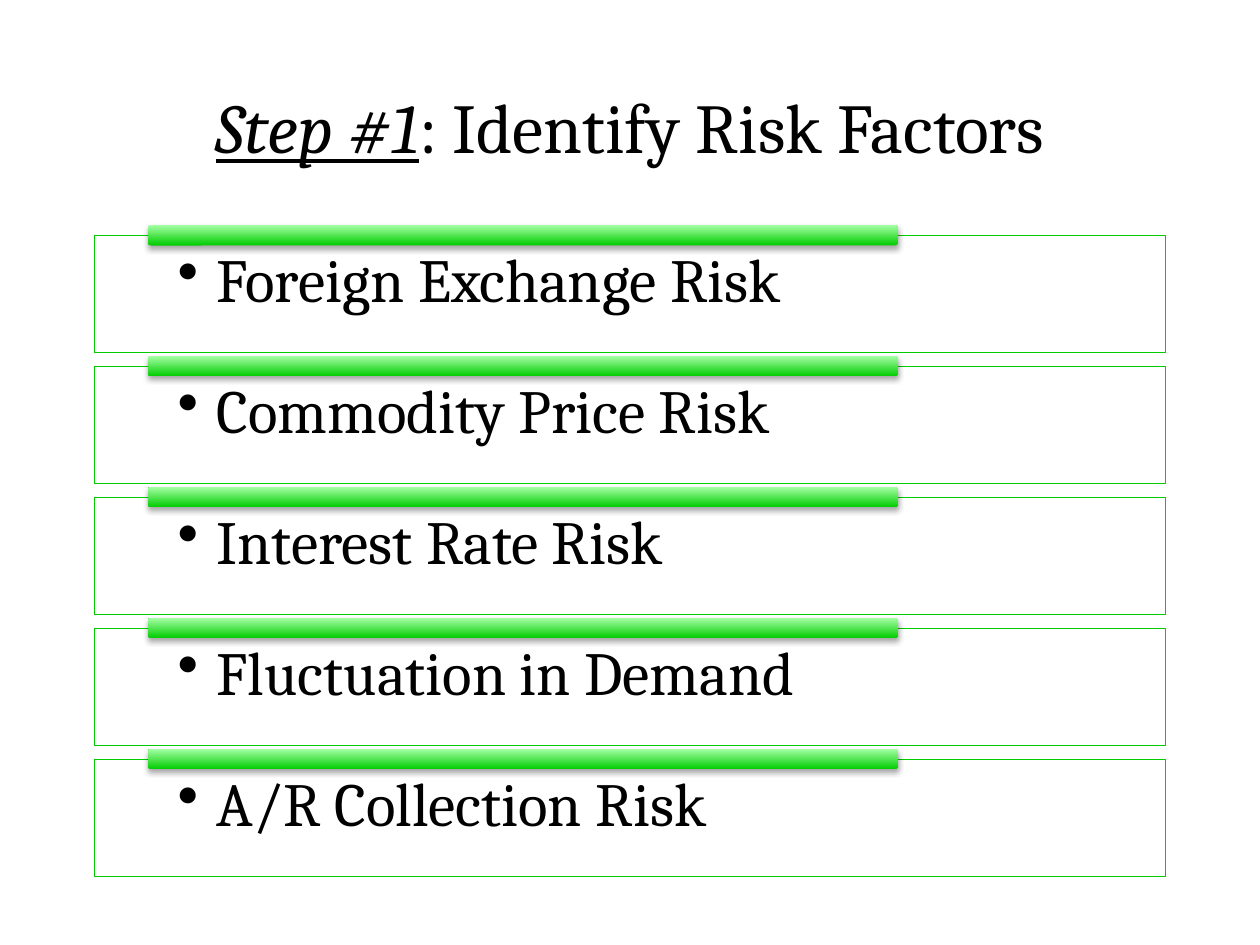
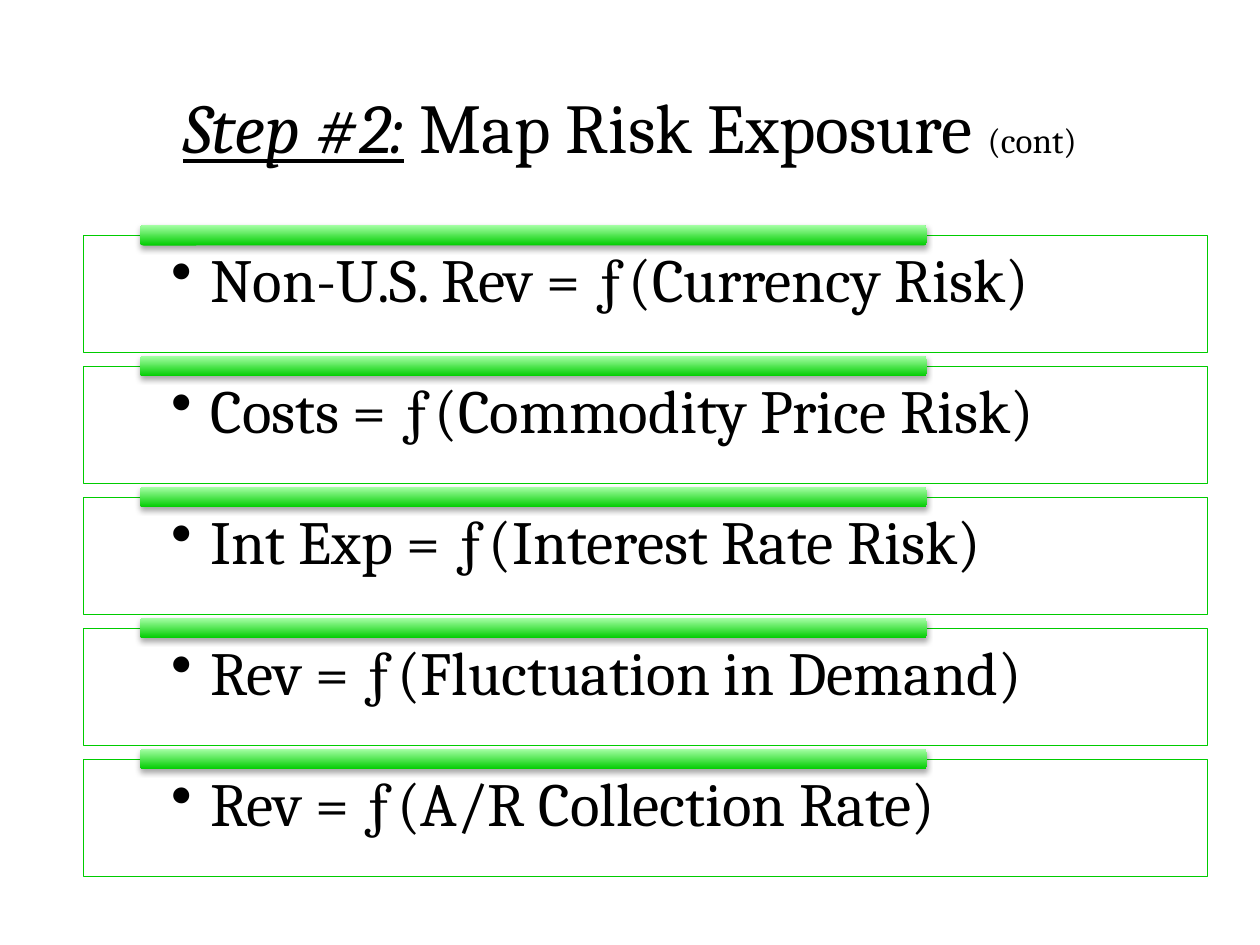
from lxml.etree import SubElement
from pptx import Presentation
from pptx.dml.color import RGBColor
from pptx.enum.shapes import MSO_SHAPE
from pptx.enum.text import MSO_ANCHOR, PP_ALIGN
from pptx.oxml.ns import qn
from pptx.util import Cm, Pt

FONT = "Cambria"
BLACK, WHITE, GREEN, LIGHT_GREEN = "000000", "FFFFFF", "00CC00", "A5FFA5"
TITLE_SIZE, ITEM_SIZE = 40, 35
FIRST_TOP, PITCH = 4.75, 2.64
BOX_HEIGHT, BAR_HEIGHT, BAR_RISE = 2.36, 0.41, 0.21
BAR_INDENT, BAR_SHARE = 0.05, 0.7
BULLET_INDENT = 0.79


def rgb(color):
    return RGBColor.from_string(color)


def add_run(p, text, size, emphasis=False):
    r = p.add_run()
    r.text = text
    r.font.name = FONT
    r.font.size = Pt(size)
    r.font.color.rgb = rgb(BLACK)
    r.font.italic = r.font.underline = emphasis


def add_shape(s, kind, left, top, width, height):
    sp = s.shapes.add_shape(kind, Cm(left), Cm(top), Cm(width), Cm(height))
    sp.shadow.inherit = False
    return sp


def set_title(s, step, heading, suffix=""):
    title = s.shapes.title
    title.left, title.top, title.width, title.height = Cm(1.9), Cm(1.27), Cm(21.6), Cm(2.54)
    tf = title.text_frame
    tf.vertical_anchor = MSO_ANCHOR.MIDDLE
    p = tf.paragraphs[0]
    p.alignment = PP_ALIGN.CENTER
    add_run(p, step, TITLE_SIZE, emphasis=True)
    add_run(p, heading, TITLE_SIZE)
    if suffix:
        add_run(p, suffix, TITLE_SIZE / 2)


def add_bullet(p):
    pPr = p._p.get_or_add_pPr()
    pPr.set("marL", str(Cm(BULLET_INDENT)))
    pPr.set("indent", str(-Cm(BULLET_INDENT)))
    SubElement(pPr, qn("a:buChar"), char="•")


def add_item_box(s, text, left, top, width, inset):
    sp = add_shape(s, MSO_SHAPE.RECTANGLE, left, top, width, BOX_HEIGHT)
    sp.fill.solid()
    sp.fill.fore_color.rgb = rgb(WHITE)
    fill_color = sp._element.spPr.find(qn("a:solidFill"))[0]
    SubElement(fill_color, qn("a:alpha"), val="90000")
    sp.line.color.rgb = rgb(GREEN)
    sp.line.width = Pt(0.75)
    tf = sp.text_frame
    tf.word_wrap = True
    tf.vertical_anchor = MSO_ANCHOR.TOP
    tf.margin_left = tf.margin_right = Cm(inset)
    tf.margin_top, tf.margin_bottom = Cm(0.28), Cm(0.69)
    p = tf.paragraphs[0]
    p.alignment = PP_ALIGN.LEFT
    p.level = 1
    p.line_spacing = 0.9
    add_bullet(p)
    add_run(p, text, ITEM_SIZE)


def add_bar(s, left, top, width):
    sp = add_shape(s, MSO_SHAPE.ROUNDED_RECTANGLE, left, top, width, BAR_HEIGHT)
    sp.line.fill.background()
    sp.fill.gradient()
    sp.fill.gradient_angle = 90
    for stop, color in zip(sp.fill.gradient_stops, (GREEN, LIGHT_GREEN)):
        stop.color.rgb = rgb(color)
    effects = sp._element.spPr.find(qn("a:effectLst"))
    shadow = SubElement(effects, qn("a:outerShdw"), blurRad=str(Pt(3.1)),
                        dist=str(Pt(1.8)), dir="5400000", rotWithShape="0")
    shadow_color = SubElement(shadow, qn("a:srgbClr"), val=BLACK)
    SubElement(shadow_color, qn("a:alpha"), val="35000")


def add_item_list(s, items, left, width, inset):
    for i, text in enumerate(items):
        top = FIRST_TOP + i * PITCH
        add_item_box(s, text, left, top, width, inset)
        add_bar(s, left + BAR_INDENT * width, top - BAR_RISE, BAR_SHARE * width)


def add_step_slide(prs, title, items, left, width, inset):
    s = prs.slides.add_slide(prs.slide_layouts[5])
    set_title(s, *title)
    add_item_list(s, items, left, width, inset)


def main():
    prs = Presentation()
    prs.slide_width, prs.slide_height = Cm(25.4), Cm(19.05)
    add_step_slide(
        prs, ("Step #1", ": Identify Risk Factors"),
        ["Foreign Exchange Risk", "Commodity Price Risk", "Interest Rate Risk",
         "Fluctuation in Demand", "A/R Collection Risk"],
        left=1.9, width=21.6, inset=1.68)
    add_step_slide(
        prs, ("Step #2:", " Map Risk Exposure ", "(cont)"),
        ["Non-U.S. Rev = ƒ(Currency Risk)", "Costs = ƒ(Commodity Price Risk)",
         "Int Exp = ƒ(Interest Rate Risk)", "Rev = ƒ(Fluctuation in Demand)",
         "Rev = ƒ(A/R Collection Rate)"],
        left=1.69, width=22.66, inset=1.76)
    prs.save("out.pptx")


if __name__ == "__main__":
    main()
